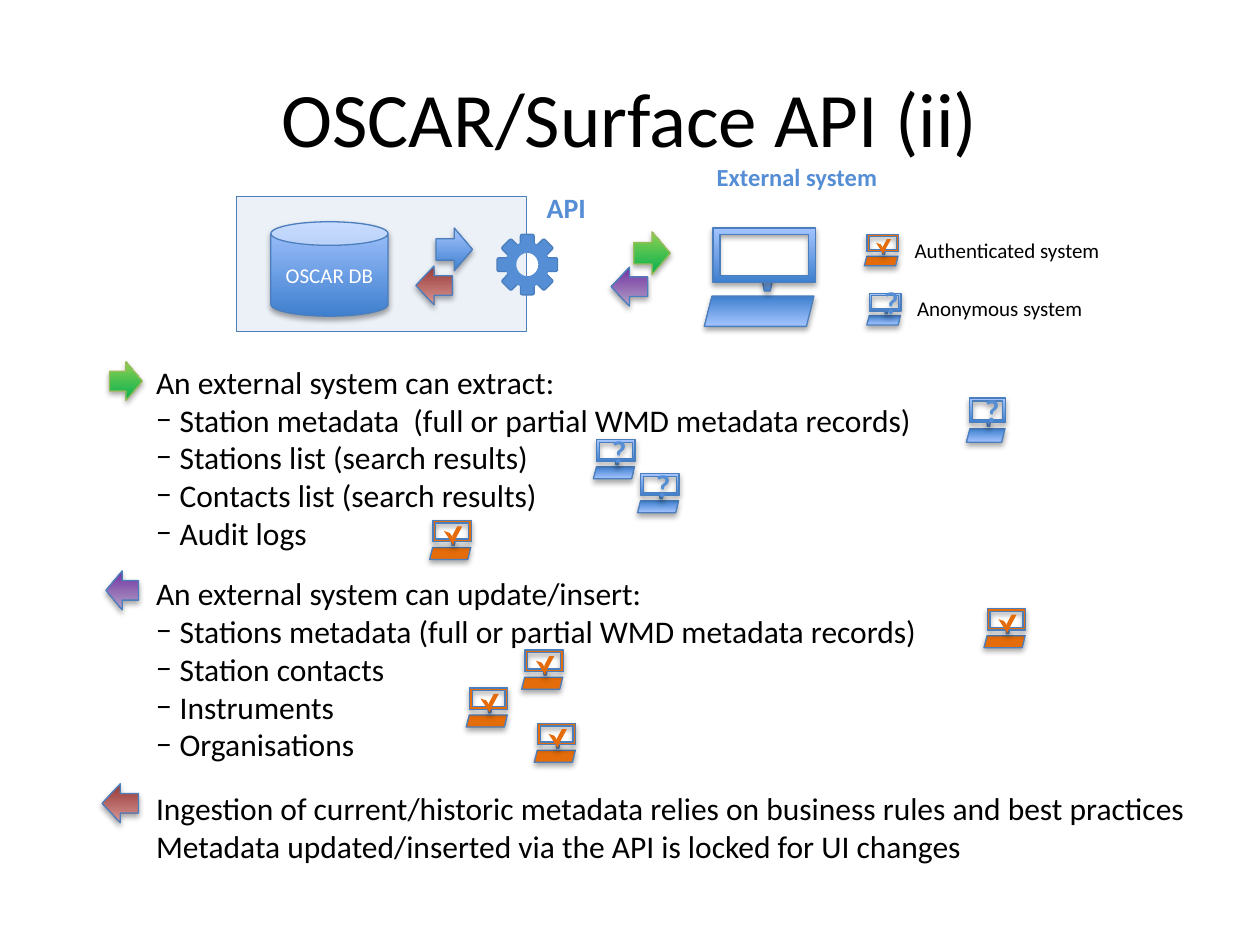
"""Build the OSCAR/Surface API slide: system diagram, legend and access rules."""
from dataclasses import dataclass
from math import cos, radians, sin
from typing import NamedTuple, Optional, Union

from lxml.etree import SubElement
from pptx import Presentation
from pptx.dml.color import RGBColor
from pptx.enum.shapes import MSO_SHAPE
from pptx.enum.text import MSO_ANCHOR, MSO_AUTO_SIZE, PP_ALIGN
from pptx.oxml.ns import qn
from pptx.util import Emu, Pt

PX = 9144
FONT = "Calibri"
BLACK = RGBColor(0x00, 0x00, 0x00)
WHITE = RGBColor(0xFF, 0xFF, 0xFF)
ORANGE = RGBColor(0xE4, 0x6C, 0x0A)
GEAR_BLUE = RGBColor(0x55, 0x8E, 0xD5)
PANEL = RGBColor(0xEC, 0xF1, 0xF8)
OUTLINE = RGBColor(0x4B, 0x7E, 0xBC)
GREEN_OUTLINE = RGBColor(0x9B, 0xBB, 0x59)


class Box(NamedTuple):
    left: float
    top: float
    width: float
    height: float


class Gradient(NamedTuple):
    start: RGBColor
    end: RGBColor


Fill = Union[RGBColor, Gradient]

BLUE = Gradient(RGBColor(0x3F, 0x80, 0xCE), RGBColor(0xA4, 0xC4, 0xFF))
GREEN = Gradient(RGBColor(0x00, 0xB0, 0x50), RGBColor(0x92, 0xD0, 0x50))
PURPLE = Gradient(RGBColor(0x70, 0x30, 0xA0), RGBColor(0xB3, 0xA2, 0xC7))
RED = Gradient(RGBColor(0x95, 0x37, 0x35), RGBColor(0xD9, 0x96, 0x94))


@dataclass(frozen=True)
class Arrow:
    box: Box
    fill: Gradient
    line: RGBColor = OUTLINE
    rotation: int = 180


@dataclass(frozen=True)
class Computer:
    box: Box
    mark: str = ""
    label: str = ""
    label_box: Optional[Box] = None


@dataclass(frozen=True)
class Section:
    heading: str
    items: tuple[str, ...] = ()
    gap: float = 0


COMPUTER_GRID = (88, 78)
KEYBOARD = Box(0, 54, 87, 24)
STEM = Box(46, 41, 8, 9)
SCREEN = Box(7, 0, 81, 43)
LONG_TICK = Box(48, 12, 21, 37)
SHORT_TICK = Box(29, 22, 21, 25)

ARROWS = (
    Arrow(Box(503, 184, 29, 34), GREEN, GREEN_OUTLINE, 0),
    Arrow(Box(485, 212, 29, 31), PURPLE),
    Arrow(Box(87, 287, 26, 31), GREEN, GREEN_OUTLINE, 0),
    Arrow(Box(84, 453, 26, 31), PURPLE),
    Arrow(Box(81, 622, 29, 31), RED),
)
DATABASE_ARROWS = (
    Arrow(Box(346, 181, 29, 34), BLUE, OUTLINE, 0),
    Arrow(Box(330, 211, 29, 31), RED),
)
COMPUTERS = (
    Computer(Box(559, 181, 88, 78)),
    Computer(Box(767, 316, 31, 35), "?"),
    Computer(Box(471, 349, 33, 31), "?"),
    Computer(Box(506, 376, 33, 31), "?"),
    Computer(Box(341, 413, 33, 31), "tick"),
    Computer(Box(781, 483, 33, 31), "tick"),
    Computer(Box(414, 516, 33, 31), "tick"),
    Computer(Box(370, 546, 33, 31), "tick"),
    Computer(Box(424, 574, 33, 31), "tick"),
    Computer(Box(686, 186, 27, 25), "tick", "Authenticated system", Box(716, 184, 169, 30)),
    Computer(Box(688, 233, 27, 25), "?", "Anonymous system", Box(718, 230, 153, 30)),
)
SECTIONS = (
    Section("An external system can extract:", (
        "Station metadata  (full or partial WMD metadata records)",
        "Stations list (search results)",
        "Contacts list (search results)",
        "Audit logs")),
    Section("An external system can update/insert:", (
        "Stations metadata (full or partial WMD metadata records)",
        "Station contacts",
        "Instruments",
        "Organisations"), 12.8),
    Section("Ingestion of current/historic metadata relies on business rules and best practices",
            gap=14.6),
    Section("Metadata updated/inserted via the API is locked for UI changes"),
)


def emu(box: Box) -> list[Emu]:
    return [Emu(round(length * PX)) for length in box]


def style_runs(paragraph, size: float, color: RGBColor, bold: bool = False) -> None:
    for run in paragraph.runs:
        run.font.name, run.font.size, run.font.bold = FONT, Pt(size), bold
        run.font.color.rgb = color


def add_shadow(shape) -> None:
    effects = shape.shadow._element.find(qn("a:effectLst"))
    shadow = SubElement(effects, qn("a:outerShdw"), blurRad="40000", dist="23000",
                        dir="5400000", rotWithShape="0")
    SubElement(SubElement(shadow, qn("a:srgbClr"), val="000000"), qn("a:alpha"), val="35000")


def draw_shape(shapes, kind: MSO_SHAPE, box: Box, fill: Fill,
               line: Optional[RGBColor] = OUTLINE, rotation: float = 0, shadow: bool = True):
    shape = shapes.add_shape(kind, *emu(box))
    shape.rotation = rotation
    shape.shadow.inherit = False
    if shadow:
        add_shadow(shape)
    if isinstance(fill, Gradient):
        shape.fill.gradient()
        shape.fill.gradient_angle = 90
        for stop, color in zip(shape.fill.gradient_stops, fill):
            stop.color.rgb = color
    else:
        shape.fill.solid()
        shape.fill.fore_color.rgb = fill
    if line is None:
        shape.line.fill.background()
    else:
        shape.line.color.rgb = line
        shape.line.width = Pt(0.75)
    return shape


def write_centred(shape, text: str, size: float, color: RGBColor, bold: bool = False) -> None:
    shape.text_frame.text = text
    shape.text_frame.vertical_anchor = MSO_ANCHOR.MIDDLE
    paragraph = shape.text_frame.paragraphs[0]
    paragraph.alignment = PP_ALIGN.CENTER
    style_runs(paragraph, size, color, bold)


def draw_label(shapes, box: Box, text: str, size: float, color: RGBColor, bold: bool = False):
    label = shapes.add_textbox(*emu(box))
    label.text_frame.word_wrap = False
    label.text_frame.auto_size = MSO_AUTO_SIZE.SHAPE_TO_FIT_TEXT
    label.text_frame.text = text
    style_runs(label.text_frame.paragraphs[0], size, color, bold)
    return label


def draw_arrow(shapes, arrow: Arrow) -> None:
    draw_shape(shapes, MSO_SHAPE.RIGHT_ARROW, arrow.box, arrow.fill, arrow.line, arrow.rotation)


def draw_computer(shapes, computer: Computer) -> None:
    left, top, width, height = computer.box
    across, down = width / COMPUTER_GRID[0], height / COMPUTER_GRID[1]

    def placed(part: Box) -> Box:
        return Box(left + part.left * across, top + part.top * down,
                   part.width * across, part.height * down)

    parts = shapes.add_group_shape().shapes
    ticked = computer.mark == "tick"
    fill = ORANGE if ticked else BLUE
    draw_shape(parts, MSO_SHAPE.PARALLELOGRAM, placed(KEYBOARD), fill, rotation=180)
    draw_shape(parts, MSO_SHAPE.FLOWCHART_MANUAL_OPERATION, placed(STEM), fill)
    screen = draw_shape(parts, MSO_SHAPE.FRAME, placed(SCREEN), fill)
    if ticked:
        draw_shape(parts, MSO_SHAPE.DIAGONAL_STRIPE, placed(LONG_TICK), fill, None, shadow=False)
        short = draw_shape(parts, MSO_SHAPE.DIAGONAL_STRIPE, placed(SHORT_TICK), fill, None,
                           108.1, False)
        short.adjustments[0] = 0.52
    elif computer.mark:
        write_centred(screen, computer.mark, 18, GEAR_BLUE, True)
    if computer.label_box:
        draw_label(parts, computer.label_box, computer.label, 12, BLACK)


def draw_gear(shapes, x: float, y: float) -> None:
    for angle in range(0, 360, 45):
        tooth = Box(x + 19.5 * cos(radians(angle)) - 5.5,
                    y + 19.5 * sin(radians(angle)) - 4.5, 11, 9)
        draw_shape(shapes, MSO_SHAPE.ROUNDED_RECTANGLE, tooth, GEAR_BLUE,
                   rotation=(angle + 90) % 360, shadow=False)
    draw_shape(shapes, MSO_SHAPE.DONUT, Box(x - 17.5, y - 18, 35, 36), GEAR_BLUE, None,
               shadow=False)


def draw_database(shapes) -> None:
    parts = shapes.add_group_shape().shapes
    draw_shape(parts, MSO_SHAPE.RECTANGLE, Box(188, 156, 230, 107), PANEL, shadow=False)
    draw_gear(parts, 418.5, 210)
    draw_label(parts, Box(424, 146, 52, 37), "API", 16, GEAR_BLUE, True)
    database = draw_shape(parts, MSO_SHAPE.CAN, Box(215, 176, 93, 75), BLUE)
    write_centred(database, "OSCAR DB", 12, WHITE)
    for arrow in DATABASE_ARROWS:
        draw_arrow(parts, arrow)


def make_bullet(paragraph) -> None:
    properties = paragraph._p.get_or_add_pPr()
    properties.set("marL", "171450")
    properties.set("indent", "-171450")
    SubElement(properties, qn("a:buFont"), typeface=FONT)
    SubElement(properties, qn("a:buChar"), char="−")


def draw_rules(shapes) -> None:
    first, *others = SECTIONS
    frame = draw_label(shapes, Box(114, 283, 846, 411), first.heading, 18, BLACK).text_frame
    for section in SECTIONS:
        if section in others:
            heading = frame.add_paragraph()
            heading.text = section.heading
            heading.space_before = Pt(section.gap)
            style_runs(heading, 18, BLACK)
        for item in section.items:
            bullet = frame.add_paragraph()
            bullet.text = item
            make_bullet(bullet)
            style_runs(bullet, 18, BLACK)


def main() -> None:
    presentation = Presentation()
    presentation.slide_width, presentation.slide_height = Emu(1000 * PX), Emu(750 * PX)
    shapes = presentation.slides.add_slide(presentation.slide_layouts[6]).shapes
    title = shapes.add_textbox(*emu(Box(50, 30, 900, 125)))
    title.text_frame.word_wrap = True
    write_centred(title, "OSCAR/Surface API (ii)", 44, BLACK)
    draw_label(shapes, Box(559, 124, 180, 41), "External system", 14, GEAR_BLUE, True)
    draw_rules(shapes)
    for arrow in ARROWS:
        draw_arrow(shapes, arrow)
    for computer in COMPUTERS:
        draw_computer(shapes, computer)
    draw_database(shapes)
    presentation.save("out.pptx")


if __name__ == "__main__":
    main()
